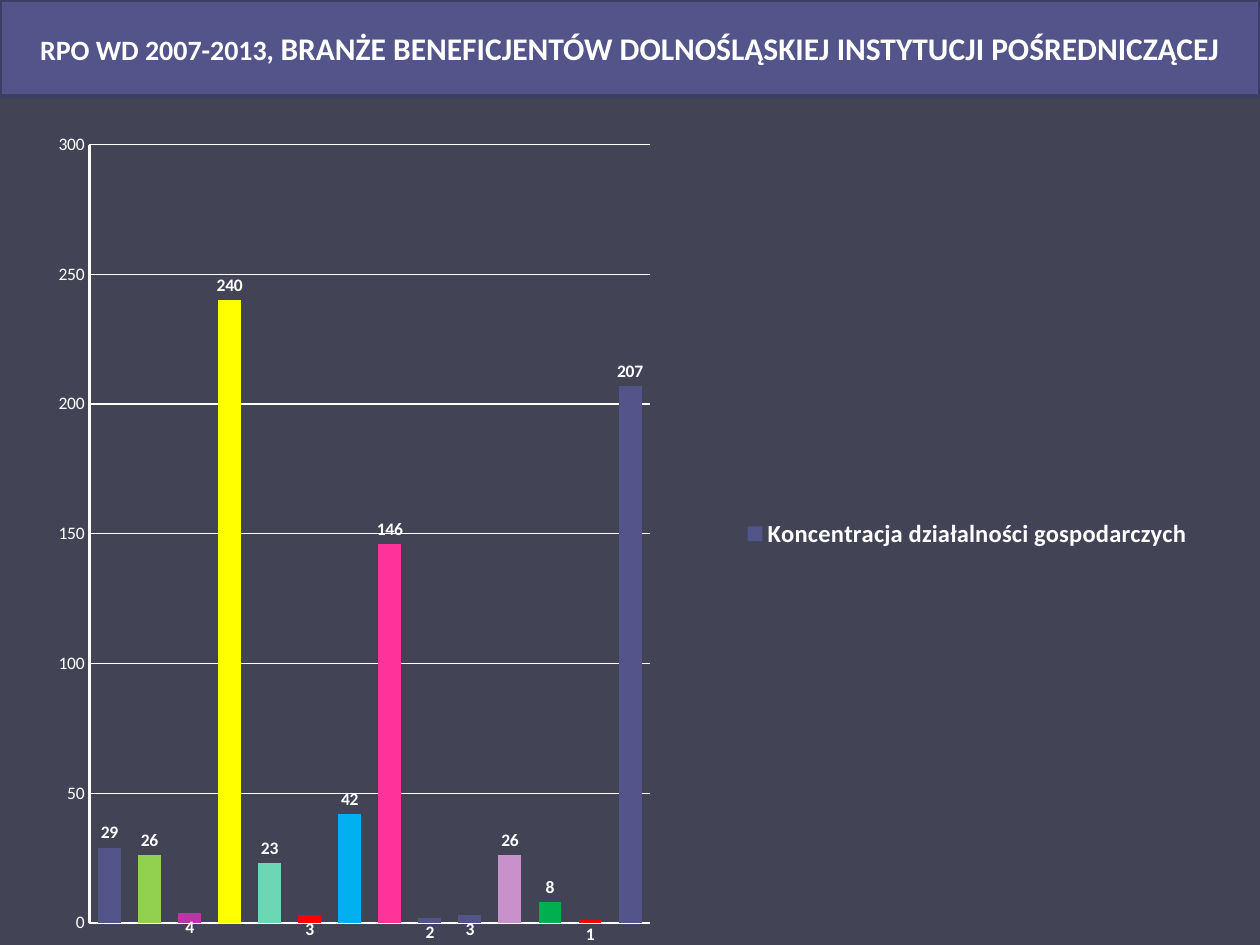
from dataclasses import dataclass

from lxml import etree
from pptx import Presentation
from pptx.chart.data import CategoryChartData
from pptx.dml.color import RGBColor
from pptx.enum.chart import XL_CHART_TYPE, XL_LABEL_POSITION, XL_LEGEND_POSITION, XL_TICK_LABEL_POSITION, XL_TICK_MARK
from pptx.enum.shapes import MSO_SHAPE
from pptx.enum.text import MSO_ANCHOR, PP_ALIGN
from pptx.oxml.ns import qn
from pptx.util import Emu, Pt

COLUMNS = XL_CHART_TYPE.COLUMN_CLUSTERED
INSIDE_END = XL_LABEL_POSITION.INSIDE_END
OUTSIDE_END = XL_LABEL_POSITION.OUTSIDE_END
LEGEND_RIGHT = XL_LEGEND_POSITION.RIGHT
NO_LABELS = XL_TICK_LABEL_POSITION.NONE
NO_TICKS = XL_TICK_MARK.NONE
RECTANGLE = MSO_SHAPE.RECTANGLE
MIDDLE = MSO_ANCHOR.MIDDLE
CENTER = PP_ALIGN.CENTER
EMU_PER_PX = 914400 / 126

SERIES_NAME = "Koncentracja działalności gospodarczych"
BRANCH_COUNTS = (29, 26, 4, 240, 23, 3, 42, 146, 2, 3, 26, 8, 1, 207)
BRANCH_COLORS = {
    1: "92D050", 2: "B836A5", 3: "FFFF00", 4: "6CD6B5", 5: "FF0000",
    6: "00B0F0", 7: "FF3399", 10: "C991CB", 11: "00B050", 12: "FF0000",
}
LABELS_ABOVE = (0, 1, 3, 4, 6, 7, 10, 11, 13)


@dataclass(frozen=True)
class Theme:
    font: str = "Calibri"
    background: str = "424456"
    accent: str = "53548A"
    border: str = "3D3E66"
    text: str = "FFFFFF"
    chart_size: int = 10
    legend_size: int = 14
    lead_size: int = 16
    title_size: int = 18


def px(length):
    return Emu(round(length * EMU_PER_PX))


def fill(target, color):
    target.fill.solid()
    target.fill.fore_color.rgb = RGBColor.from_string(color)


def stroke(line, color, width):
    line.color.rgb = RGBColor.from_string(color)
    line.width = Pt(width)


def set_layout(element, x, y, width, height, inner=False):
    layout = element.find(qn("c:layout"))
    if layout is None:
        layout = etree.Element(qn("c:layout"))
        position = element.find(qn("c:legendPos"))
        if position is None:
            element.insert(0, layout)
        else:
            position.addnext(layout)
    manual = etree.SubElement(layout, qn("c:manualLayout"))
    values = [("layoutTarget", "inner")] if inner else []
    values += [("xMode", "edge"), ("yMode", "edge"), ("x", x), ("y", y), ("w", width), ("h", height)]
    for name, value in values:
        etree.SubElement(manual, qn(f"c:{name}")).set("val", str(value))


class SlideBuilder:
    """Adds themed elements to the current slide, measured in px."""

    def __init__(self, slide, theme):
        self.slide = slide
        self.theme = theme
        fill(slide.background, theme.background)

    def format_font(self, font, size, bold=False):
        font.name = self.theme.font
        font.size = Pt(size)
        font.bold = bold
        font.color.rgb = RGBColor.from_string(self.theme.text)

    def banner(self, left, top, width, height, parts):
        shape = self.slide.shapes.add_shape(RECTANGLE, px(left), px(top), px(width), px(height))
        shape.shadow.inherit = False
        fill(shape, self.theme.accent)
        stroke(shape.line, self.theme.border, 2)
        shape.text_frame.word_wrap = True
        shape.text_frame.vertical_anchor = MIDDLE
        paragraph = shape.text_frame.paragraphs[0]
        paragraph.alignment = CENTER
        for text, size in parts:
            run = paragraph.add_run()
            run.text = text
            self.format_font(run.font, size, bold=True)

    def column_chart(self, left, top, width, height, name, values, colors, labels_above):
        data = CategoryChartData()
        data.categories = [str(number) for number in range(1, len(values) + 1)]
        data.add_series(name, values)
        frame = self.slide.shapes.add_chart(COLUMNS, px(left), px(top), px(width), px(height), data)
        chart = frame.chart
        chart.has_title = False
        self.format_font(chart.font, self.theme.chart_size)
        self.format_axes(chart)
        self.format_legend(chart)
        plot = chart.plots[0]
        plot.vary_by_categories = False
        plot.gap_width = 75
        plot.overlap = 40
        self.format_series(plot.series[0], colors, labels_above)
        plot_area = chart.element.find(f".//{qn('c:plotArea')}")
        set_layout(plot_area, 0.045, 0.024, 0.463, 0.952, inner=True)

    def format_axes(self, chart):
        for axis in (chart.category_axis, chart.value_axis):
            axis.major_tick_mark = axis.minor_tick_mark = NO_TICKS
            stroke(axis.format.line, self.theme.text, 1.5)
        chart.category_axis.tick_label_position = NO_LABELS
        chart.value_axis.minimum_scale = 0
        chart.value_axis.maximum_scale = 300
        chart.value_axis.major_unit = 50
        chart.value_axis.has_major_gridlines = True
        stroke(chart.value_axis.major_gridlines.format.line, self.theme.text, 0.75)

    def format_legend(self, chart):
        chart.has_legend = True
        chart.legend.position = LEGEND_RIGHT
        chart.legend.include_in_layout = False
        self.format_font(chart.legend.font, self.theme.legend_size, bold=True)
        set_layout(chart.legend._element, 0.58, 0.47, 0.38, 0.06)

    def format_series(self, series, colors, labels_above):
        fill(series.format, self.theme.accent)
        series.invert_if_negative = False
        labels = series.data_labels
        labels.show_value = True
        labels.position = INSIDE_END
        self.format_font(labels.font, self.theme.chart_size, bold=True)
        for index, color in colors.items():
            fill(series.points[index].format, color)
        for index in labels_above:
            label = series.points[index].data_label
            self.format_font(label.font, self.theme.chart_size, bold=True)
            label.position = OUTSIDE_END


def main():
    presentation = Presentation()
    presentation.slide_width = px(1260)
    presentation.slide_height = px(945)
    slide = presentation.slides.add_slide(presentation.slide_layouts[6])
    theme = Theme()
    builder = SlideBuilder(slide, theme)
    builder.column_chart(35, 125, 1211, 820, SERIES_NAME, BRANCH_COUNTS, BRANCH_COLORS, LABELS_ABOVE)
    builder.banner(0, 0, 1260, 96, [
        ("RPO WD 2007-2013, ", theme.lead_size),
        ("BRANŻE BENEFICJENTÓW DOLNOŚLĄSKIEJ INSTYTUCJI POŚREDNICZĄCEJ", theme.title_size),
    ])
    presentation.save("out.pptx")


if __name__ == "__main__":
    main()
